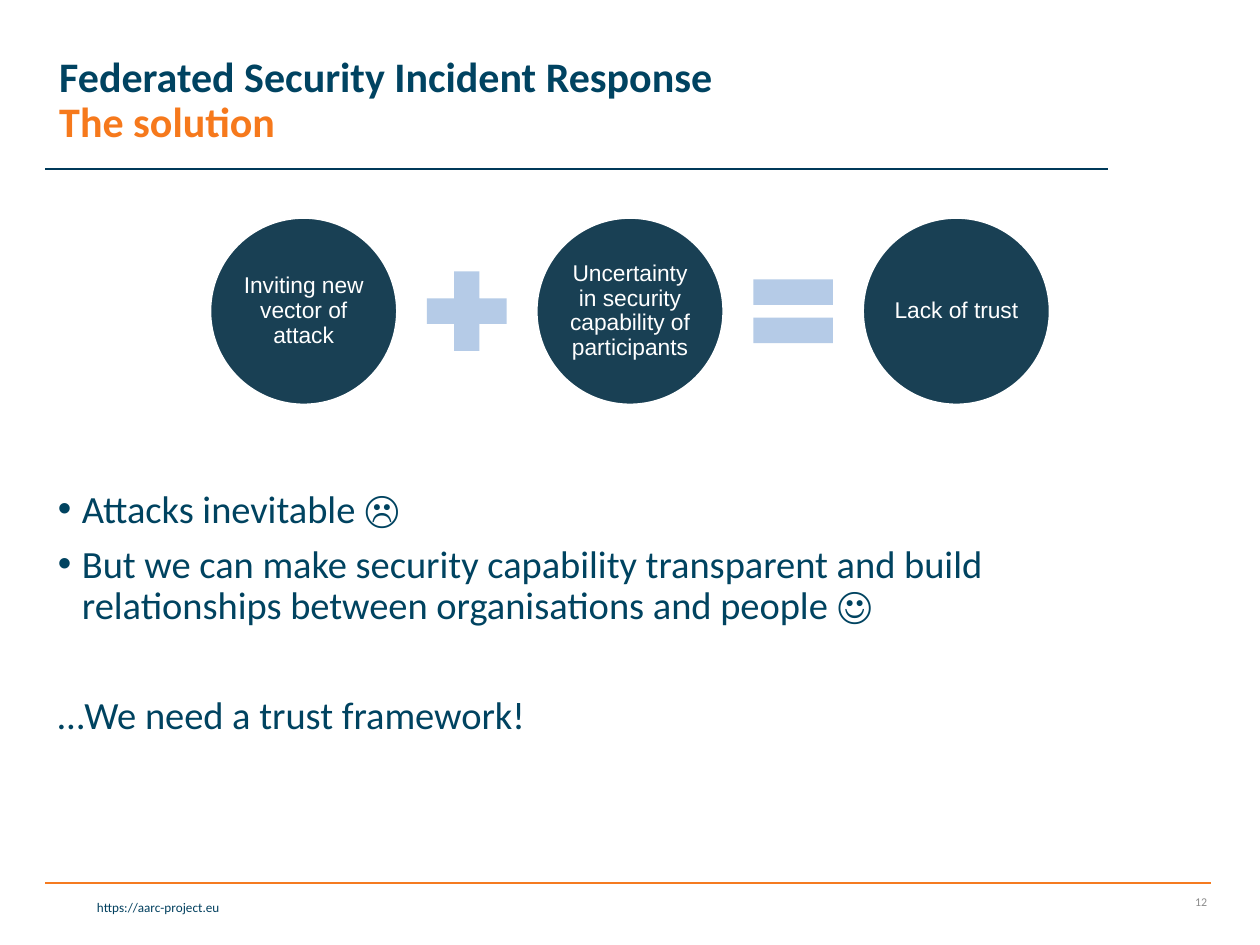
import pptx
import pptx.util
import pptx.dml.color
import pptx.enum.shapes
import pptx.enum.text
import pptx.oxml
from dataclasses import dataclass
from lxml import etree

Inches = pptx.util.Inches
Pt = pptx.util.Pt
MSO_SHAPE = pptx.enum.shapes.MSO_SHAPE
PP_ALIGN = pptx.enum.text.PP_ALIGN
MSO_ANCHOR = pptx.enum.text.MSO_ANCHOR


def rgb(value):
    return pptx.dml.color.RGBColor.from_string(value)


@dataclass(frozen=True)
class Theme:
    text_font: str = "Calibri"
    diagram_font: str = "Arial"
    title: str = "004361"
    subtitle: str = "F6791C"
    body: str = "004360"
    footer: str = "003F5E"
    number: str = "8C8C8C"
    title_rule: str = "003959"
    footer_rule: str = "F57B20"
    circle: str = "194054"
    operator: str = "B5CBE7"
    white: str = "FFFFFF"
    title_size: float = 24
    body_size: float = 22
    diagram_size: float = 13
    footer_size: float = 7.5
    number_size: float = 6.8


class SlideBuilder:
    def __init__(self, slide, theme):
        self.slide = slide
        self.theme = theme

    def style(self, font, name, size, color, bold=False):
        font.name = name
        font.size = Pt(size)
        font.bold = bold
        font.color.rgb = rgb(color)

    def place(self, shape, left, top, width, height):
        shape.left, shape.top = Inches(left), Inches(top)
        shape.width, shape.height = Inches(width), Inches(height)

    def rule(self, left, right, y, color):
        connector = self.slide.shapes.add_connector(
            pptx.enum.shapes.MSO_CONNECTOR.STRAIGHT,
            Inches(left), Inches(y), Inches(right), Inches(y))
        connector.line.color.rgb = rgb(color)
        connector.line.width = Pt(1)
        etree.SubElement(connector._element.spPr, pptx.oxml.ns.qn("a:effectLst"))

    def title(self, heading, subheading, box):
        shape = self.slide.shapes.title
        self.place(shape, *box)
        frame = shape.text_frame
        frame.vertical_anchor = MSO_ANCHOR.MIDDLE
        frame.auto_size = pptx.enum.text.MSO_AUTO_SIZE.NONE
        paragraph = frame.paragraphs[0]
        paragraph.text = f"{heading}\v{subheading}"
        paragraph.alignment = PP_ALIGN.LEFT
        paragraph.line_spacing = 0.9
        for run, color in zip(paragraph.runs, (self.theme.title, self.theme.subtitle)):
            self.style(run.font, self.theme.text_font, self.theme.title_size, color, True)

    def body(self, bullets, conclusion, box):
        shape = self.slide.placeholders[1]
        self.place(shape, *box)
        frame = shape.text_frame
        frame.auto_size = pptx.enum.text.MSO_AUTO_SIZE.NONE
        frame.text = "\n".join([*bullets, conclusion])
        for index, paragraph in enumerate(frame.paragraphs):
            bulleted = index < len(bullets)
            properties = paragraph._p.get_or_add_pPr()
            indent = Inches(0.19) if bulleted else 0
            properties.set("marL", str(indent))
            properties.set("indent", str(-indent))
            if bulleted:
                bullet = etree.SubElement(properties, pptx.oxml.ns.qn("a:buChar"))
                bullet.set("char", "•")
            else:
                etree.SubElement(properties, pptx.oxml.ns.qn("a:buNone"))
            paragraph.line_spacing = 0.9
            paragraph.space_before = Pt(0 if index == 0 else 7.5 if bulleted else 39)
            for run in paragraph.runs:
                self.style(run.font, self.theme.text_font, self.theme.body_size, self.theme.body)

    def label(self, text, box, size, color, anchor):
        shape = self.slide.shapes.add_textbox(*map(Inches, box))
        frame = shape.text_frame
        frame.word_wrap = True
        frame.vertical_anchor = anchor
        paragraph = frame.paragraphs[0]
        paragraph.text = text
        paragraph.alignment = PP_ALIGN.RIGHT
        self.style(paragraph.runs[0].font, self.theme.text_font, size, color)

    def symbol(self, preset, center_x, center_y, size, fill):
        shape = self.slide.shapes.add_shape(
            preset, Inches(center_x - size / 2), Inches(center_y - size / 2),
            Inches(size), Inches(size))
        shape.shadow.inherit = False
        shape.fill.solid()
        shape.fill.fore_color.rgb = rgb(fill)
        shape.line.fill.background()
        return shape

    def circle(self, text, center_x, center_y, size):
        shape = self.symbol(MSO_SHAPE.OVAL, center_x, center_y, size, self.theme.circle)
        shape.line.color.rgb = rgb(self.theme.white)
        shape.line.width = Pt(1)
        frame = shape.text_frame
        frame.word_wrap = True
        frame.vertical_anchor = MSO_ANCHOR.MIDDLE
        frame.margin_left = frame.margin_right = Inches(0.02)
        frame.margin_top = frame.margin_bottom = Inches(0.02)
        paragraph = frame.paragraphs[0]
        paragraph.text = text
        paragraph.alignment = PP_ALIGN.CENTER
        paragraph.line_spacing = 0.9
        self.style(paragraph.runs[0].font, self.theme.diagram_font,
                   self.theme.diagram_size, self.theme.white)

    def equation(self, terms, operators, first_center, center_y, pitch):
        for index, term in enumerate(terms):
            self.circle(term, first_center + index * pitch, center_y, 1.48)
        for index, operator in enumerate(operators):
            self.symbol(operator, first_center + (index + 0.5) * pitch, center_y,
                        0.86, self.theme.operator)


def main():
    presentation = pptx.Presentation()
    presentation.slide_width = Inches(10)
    presentation.slide_height = Inches(7.5)
    theme = Theme()
    slide = presentation.slides.add_slide(presentation.slide_layouts[1])
    builder = SlideBuilder(slide, theme)

    builder.rule(0.36, 9.61, 7.01, theme.footer_rule)
    builder.label("https://aarc-project.eu", (0.35, 7.09, 1.49, 0.23),
                  theme.footer_size, theme.footer, MSO_ANCHOR.TOP)
    builder.rule(0.36, 8.79, 1.34, theme.title_rule)
    builder.body(
        ["Attacks inevitable ☹",
         "But we can make security capability transparent and build "
         "relationships between organisations and people ☺"],
        "…We need a trust framework!", (0.36, 3.84, 8.95, 2.92))
    builder.label("12", (9.07, 7.01, 0.61, 0.3),
                  theme.number_size, theme.number, MSO_ANCHOR.MIDDLE)
    builder.title("Federated Security Incident Response", "The solution",
                  (0.37, 0.08, 7.88, 1.45))
    builder.equation(
        ["Inviting new vector of attack",
         "Uncertainty in security capability of participants",
         "Lack of trust"],
        [MSO_SHAPE.MATH_PLUS, MSO_SHAPE.MATH_EQUAL], 2.41, 2.47, 2.59)

    presentation.save("out.pptx")


if __name__ == "__main__":
    main()
